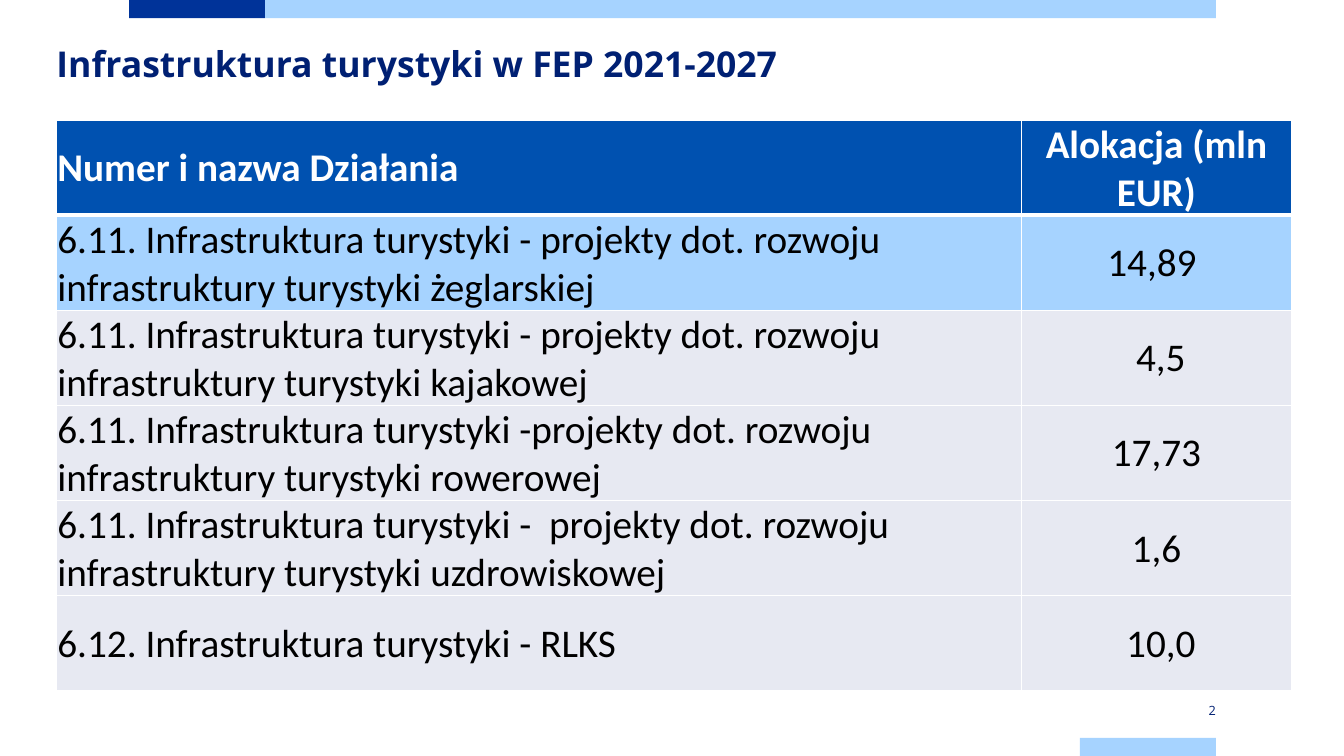
from lxml.etree import SubElement
from pptx import Presentation
from pptx.dml.color import RGBColor
from pptx.enum.shapes import MSO_SHAPE
from pptx.enum.text import MSO_ANCHOR, PP_ALIGN
from pptx.oxml.ns import qn
from pptx.util import Inches, Pt

NAVY, BLUE, LIGHT, GREY = "002073", "0051B0", "A6D3FF", "E7E9F2"
WHITE, BLACK = "FFFFFF", "000000"


def rgb(color):
    return RGBColor.from_string(color)


def add_label(text, left, top, width, height, size, bold=False):
    """Add a navy text box without side insets and return its text frame."""
    sp = s.shapes.add_textbox(Inches(left), Inches(top), Inches(width), Inches(height))
    tf = sp.text_frame
    tf.word_wrap = True
    tf.margin_left = tf.margin_right = tf.margin_top = tf.margin_bottom = 0
    tf.text = text
    font = tf.paragraphs[0].runs[0].font
    font.name, font.size, font.bold = "Open Sans", Pt(size), bold
    font.color.rgb = rgb(NAVY)
    return tf


prs = Presentation()
prs.slide_width, prs.slide_height = Inches(13.33), Inches(7.5)
s = prs.slides.add_slide(prs.slide_layouts[6])

# Colour bars at the top and bottom edges
for left, top, width, color in [
    (1.28, 0, 1.35, "003399"),
    (2.63, 0, 9.43, LIGHT),
    (10.71, 7.32, 1.35, LIGHT),
]:
    bar = s.shapes.add_shape(
        MSO_SHAPE.RECTANGLE, Inches(left), Inches(top), Inches(width), Inches(0.18))
    bar.shadow.inherit = False
    bar.fill.solid()
    bar.fill.fore_color.rgb = rgb(color)
    bar.line.fill.background()

# Slide number
tf = add_label("2", 10.71, 6.96, 1.35, 0.18, 9.1)
tf.margin_top = tf.margin_bottom = Inches(0.08)
tf.vertical_anchor = MSO_ANCHOR.MIDDLE
tf.paragraphs[0].alignment = PP_ALIGN.RIGHT

# Allocation table
rows = [
    ("Numer i nazwa Działania", "Alokacja (mln EUR)"),
    ("6.11. Infrastruktura turystyki - projekty dot. rozwoju "
     "infrastruktury turystyki żeglarskiej", "14,89 "),
    ("6.11. Infrastruktura turystyki - projekty dot. rozwoju "
     "infrastruktury turystyki kajakowej", " 4,5"),
    ("6.11. Infrastruktura turystyki -projekty dot. rozwoju "
     "infrastruktury turystyki rowerowej", "17,73"),
    ("6.11. Infrastruktura turystyki -  projekty dot. rozwoju "
     "infrastruktury turystyki uzdrowiskowej", "1,6"),
    ("6.12. Infrastruktura turystyki - RLKS", " 10,0"),
]
fills = [BLUE, LIGHT] + [GREY] * 4
table = s.shapes.add_table(
    len(rows), 2, Inches(0.56), Inches(1.19), Inches(12.25), Inches(5.64)).table
table.columns[0].width = Inches(9.57)
table.columns[1].width = Inches(2.68)

for i, (row, fill) in enumerate(zip(rows, fills)):
    table.rows[i].height = Inches(0.94)
    for j, text in enumerate(row):
        cell = table.cell(i, j)
        cell.margin_left = cell.margin_right = cell.margin_top = Inches(0.01)
        cell.margin_bottom = 0
        cell.vertical_anchor = MSO_ANCHOR.MIDDLE
        tcPr = cell._tc.get_or_add_tcPr()
        for side in ("lnL", "lnR", "lnT", "lnB"):
            thick = (i, side) in [(0, "lnB"), (1, "lnT")]
            ln = SubElement(tcPr, qn(f"a:{side}"), w=str(Pt(3 if thick else 1)))
            SubElement(SubElement(ln, qn("a:solidFill")), qn("a:srgbClr"), val=WHITE)
        cell.fill.solid()
        cell.fill.fore_color.rgb = rgb(fill)
        p = cell.text_frame.paragraphs[0]
        p.text = text
        p.alignment = PP_ALIGN.CENTER if j else PP_ALIGN.LEFT
        font = p.runs[0].font
        font.name, font.size, font.bold = "Calibri", Pt(28), i == 0
        font.color.rgb = rgb(BLACK if i else WHITE)

# Title
tf = add_label("Infrastruktura turystyki w FEP 2021-2027", 0.56, 0.39, 12.21, 1.07, 25.4, True)
tf.paragraphs[0].line_spacing = Pt(32.7)

prs.save("out.pptx")
